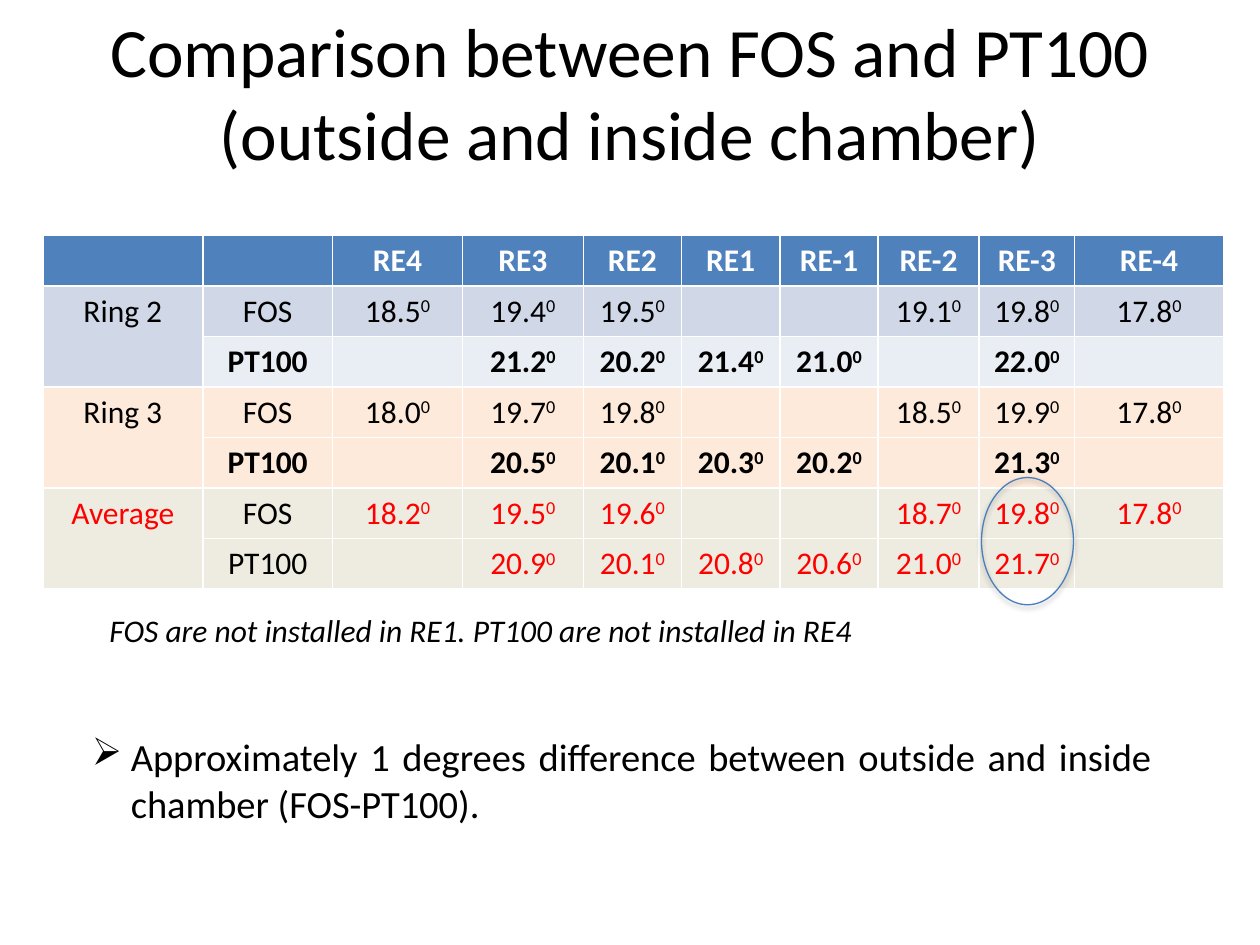
"""Builds a slide comparing FOS and PT100 temperatures in a table."""
from dataclasses import dataclass

from lxml import etree
from pptx import Presentation
from pptx import util as u
from pptx.dml.color import RGBColor
from pptx.enum import shapes, text
from pptx.oxml import ns

BLACK = RGBColor(0x00, 0x00, 0x00)
WHITE = RGBColor(0xFF, 0xFF, 0xFF)
RED = RGBColor(0xFF, 0x00, 0x00)
HEADER = RGBColor(0x4F, 0x81, 0xBD)
BLUE = RGBColor(0xD0, 0xD8, 0xE8)
PALE = RGBColor(0xE9, 0xED, 0xF4)
PEACH = RGBColor(0xFD, 0xEA, 0xDA)
CREAM = RGBColor(0xEE, 0xEC, 0xE1)
OUTLINE = RGBColor(0x4B, 0x7E, 0xBC)

FONT = "Calibri"
WIDTH, HEIGHT = 10, 7.5
COLUMNS = (1.27, 1.03, 1.03, 0.96, 0.78, 0.78, 0.78, 0.8, 0.76, 1.18)
ROW_HEIGHT = 0.4
HEADINGS = ("", "", "RE4", "RE3", "RE2", "RE1", "RE-1", "RE-2", "RE-3", "RE-4")


@dataclass(frozen=True)
class Box:
    left: float
    top: float
    width: float
    height: float

    def emu(self) -> tuple:
        return tuple(u.Inches(v) for v in (self.left, self.top, self.width, self.height))


@dataclass(frozen=True)
class Style:
    size: float = 18
    color: RGBColor = BLACK
    bold: bool = False
    italic: bool = False


@dataclass(frozen=True)
class Reading:
    sensor: str
    values: tuple
    fill: RGBColor
    bold: bool = False


@dataclass(frozen=True)
class Group:
    name: str
    readings: tuple
    color: RGBColor = BLACK


GROUPS = (
    Group("Ring 2", (
        Reading("FOS", ("18.5", "19.4", "19.5", "", "", "19.1", "19.8", "17.8"), BLUE),
        Reading("PT100", ("", "21.2", "20.2", "21.4", "21.0", "", "22.0", ""), PALE, True),
    )),
    Group("Ring 3", (
        Reading("FOS", ("18.0", "19.7", "19.8", "", "", "18.5", "19.9", "17.8"), PEACH),
        Reading("PT100", ("", "20.5", "20.1", "20.3", "20.2", "", "21.3", ""), PEACH, True),
    )),
    Group("Average", (
        Reading("FOS", ("18.2", "19.5", "19.6", "", "", "18.7", "19.8", "17.8"), CREAM),
        Reading("PT100", ("", "20.9", "20.1", "20.8", "20.6", "21.0", "21.7", ""), CREAM),
    ), RED),
)


def add_run(p, words: str, style: Style, raised: bool = False) -> None:
    """Append one styled run to a paragraph."""
    r = p.add_run()
    r.text = words
    r.font.name, r.font.size = FONT, u.Pt(style.size)
    r.font.bold, r.font.italic = style.bold, style.italic
    r.font.color.rgb = style.color
    if raised:
        r.font._element.set("baseline", "30000")


def add_text(slide, box: Box, lines: tuple, style: Style, align, anchor=text.MSO_ANCHOR.TOP):
    """Add a wrapped text box whose lines share one paragraph."""
    tf = slide.shapes.add_textbox(*box.emu()).text_frame
    tf.word_wrap, tf.vertical_anchor = True, anchor
    p = tf.paragraphs[0]
    p.alignment = align
    for i, line in enumerate(lines):
        if i:
            p.add_line_break()
        add_run(p, line, style)
    return tf


def set_bullet(p, char: str, indent: float) -> None:
    """Give a paragraph a hanging bullet."""
    pPr = p._p.get_or_add_pPr()
    pPr.set("marL", str(u.Inches(indent)))
    pPr.set("indent", str(-u.Inches(indent)))
    etree.SubElement(pPr, ns.qn("a:buChar")).set("char", char)


def fill_cell(cell, words: str, fill: RGBColor, style: Style, degrees: bool = False) -> None:
    """Colour a cell and write its centred content."""
    cell.fill.solid()
    cell.fill.fore_color.rgb = fill
    p = cell.text_frame.paragraphs[0]
    p.alignment = text.PP_ALIGN.CENTER
    if words:
        add_run(p, words, style)
        if degrees:
            add_run(p, "0", style, raised=True)


def add_readings(slide, left: float, top: float) -> None:
    """Add the table of sensor readings."""
    rows = 1 + sum(len(g.readings) for g in GROUPS)
    box = Box(left, top, sum(COLUMNS), rows * ROW_HEIGHT)
    table = slide.shapes.add_table(rows, len(COLUMNS), *box.emu()).table
    for column, width in zip(table.columns, COLUMNS):
        column.width = u.Inches(width)
    for c, heading in enumerate(HEADINGS):
        fill_cell(table.cell(0, c), heading, HEADER, Style(color=WHITE, bold=True))
    row = 1
    for group in GROUPS:
        name = table.cell(row, 0)
        name.merge(table.cell(row + len(group.readings) - 1, 0))
        fill_cell(name, group.name, group.readings[0].fill, Style(color=group.color))
        for reading in group.readings:
            fill_cell(table.cell(row, 1), reading.sensor, reading.fill, Style(bold=reading.bold))
            for c, value in enumerate(reading.values, 2):
                style = Style(color=group.color, bold=reading.bold)
                fill_cell(table.cell(row, c), value, reading.fill, style, degrees=True)
            row += 1


def add_ring(slide, box: Box) -> None:
    """Add an unfilled ellipse with a soft shadow below it."""
    sp = slide.shapes.add_shape(shapes.MSO_SHAPE.OVAL, *box.emu())
    sp.fill.background()
    sp.line.color.rgb, sp.line.width = OUTLINE, u.Pt(0.75)
    sp.shadow.inherit = False
    effects = sp._element.spPr.find(ns.qn("a:effectLst"))
    shadow = etree.SubElement(effects, ns.qn("a:outerShdw"), blurRad=str(u.Pt(3.1)),
                              dist=str(u.Pt(1.8)), dir="5400000", rotWithShape="0")
    color = etree.SubElement(shadow, ns.qn("a:srgbClr"), val=str(BLACK))
    etree.SubElement(color, ns.qn("a:alpha"), val="35000")


def main() -> None:
    """Build and save the slide."""
    prs = Presentation()
    prs.slide_width, prs.slide_height = u.Inches(WIDTH), u.Inches(HEIGHT)
    slide = prs.slides.add_slide(prs.slide_layouts[6])
    align = text.PP_ALIGN
    add_text(slide, Box(0.05 * WIDTH, 0.1, 0.9 * WIDTH, HEIGHT / 6),
             ("Comparison between FOS and PT100", "(outside and inside chamber)"),
             Style(39.6), align.CENTER, text.MSO_ANCHOR.MIDDLE)
    add_readings(slide, 0.34, 1.87)
    add_ring(slide, Box(7.79, 3.79, 0.73, 1.01))
    tf = add_text(slide, Box(0.63, 5.4, 8.61, 1.21),
                  ("Approximately 1 degrees difference between outside and inside "
                   "chamber (FOS-PT100).",), Style(22), align.JUSTIFY)
    tf.margin_top = u.Inches(0.42)
    set_bullet(tf.paragraphs[0], "➢", 0.31)
    add_text(slide, Box(0.77, 4.8, 7.96, 0.4),
             ("FOS are not installed in RE1. PT100 are not installed in RE4",),
             Style(italic=True), align.LEFT)
    prs.save("out.pptx")


if __name__ == "__main__":
    main()
